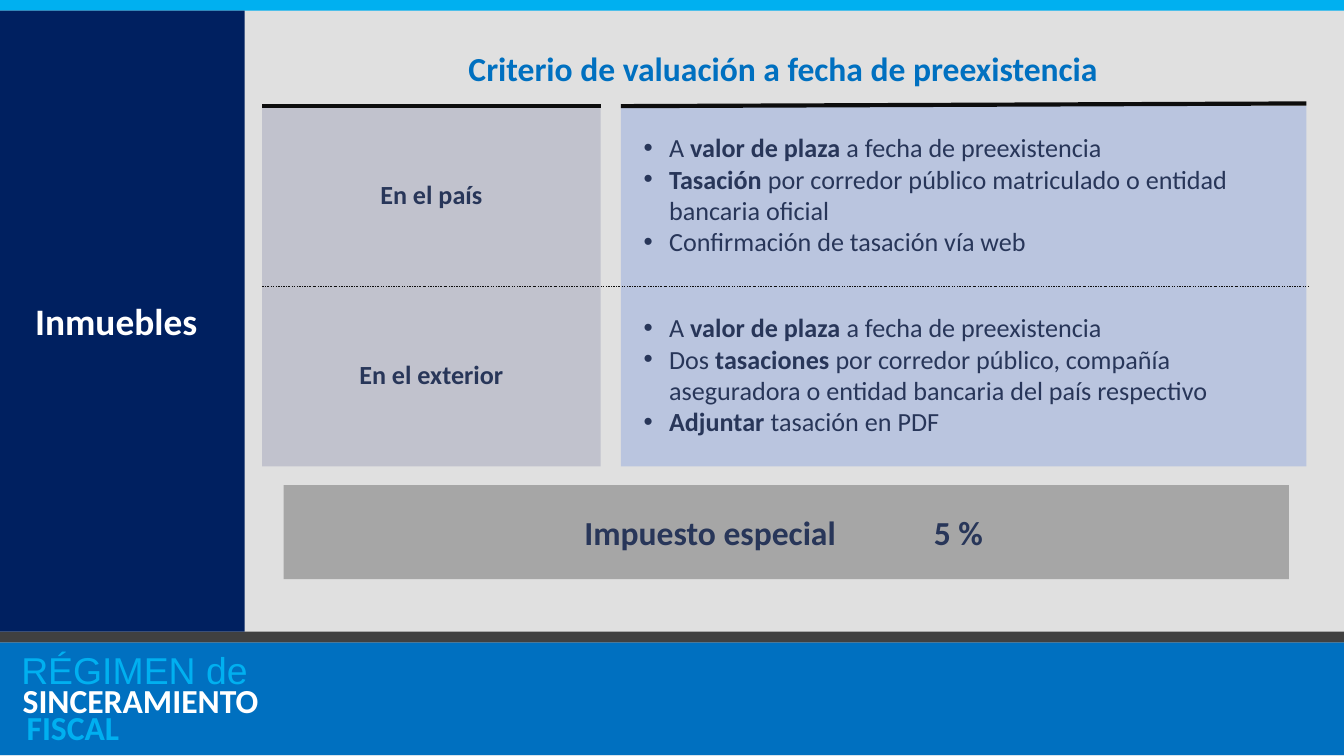
from lxml import etree
from pptx import Presentation
from pptx.dml.color import RGBColor
from pptx.enum import dml, shapes, text
from pptx.oxml import ns
from pptx.util import Inches, Pt

WHITE = RGBColor(0xFF, 0xFF, 0xFF)
PAPER = RGBColor(0xD9, 0xD9, 0xD9)
BLUE = RGBColor(0x00, 0x70, 0xC0)
SKY = RGBColor(0x00, 0xB0, 0xF0)
NAVY = RGBColor(0x00, 0x20, 0x60)
INK = RGBColor(0x28, 0x36, 0x59)
BLACK = RGBColor(0x0D, 0x0D, 0x0D)
CHARCOAL = RGBColor(0x40, 0x40, 0x40)
GREY = RGBColor(0xA6, 0xA6, 0xA6)
LABEL_FILL = RGBColor(0xC1, 0xC2, 0xCD)
CRITERIA_FILL = RGBColor(0xBA, 0xC5, 0xDF)
CENTER = text.PP_ALIGN.CENTER

ROWS = [
    ("En el país", [
        [("A ", False), ("valor de plaza", True), (" a fecha de preexistencia", False)],
        [("Tasación", True),
         (" por corredor público matriculado o entidad bancaria oficial", False)],
        [("Confirmación de tasación vía web", False)],
    ]),
    ("En el exterior", [
        [("A ", False), ("valor de plaza ", True), ("a fecha de preexistencia", False)],
        [("Dos ", False), ("tasaciones ", True),
         ("por corredor público, compañía aseguradora o entidad bancaria del país respectivo",
          False)],
        [("Adjuntar", True), (" tasación en PDF", False)],
    ]),
]


def add_rect(s, x, y, w, h, color):
    """Add a plain filled rectangle and return it."""
    sp = s.shapes.add_shape(shapes.MSO_SHAPE.RECTANGLE, Inches(x), Inches(y), Inches(w), Inches(h))
    sp.shadow.inherit = False
    sp.fill.solid()
    sp.fill.fore_color.rgb = color
    sp.line.fill.background()
    return sp


def add_line(s, x1, y1, x2, y2, width):
    """Add a straight black line and return it."""
    cx = s.shapes.add_connector(
        shapes.MSO_CONNECTOR.STRAIGHT, Inches(x1), Inches(y1), Inches(x2), Inches(y2))
    cx.line.color.rgb = BLACK
    cx.line.width = Pt(width)
    etree.SubElement(cx.element.spPr, ns.qn("a:effectLst"))
    return cx


def style_run(r, size, color, bold=True, font="Calibri"):
    """Set the font of a run."""
    r.font.name, r.font.size, r.font.bold = font, Pt(size), bold
    r.font.color.rgb = color


def add_text(s, x, y, w, h, words, size, color, align=None, bold=True, font="Calibri"):
    """Add a one-line text box and return its paragraph."""
    tf = s.shapes.add_textbox(Inches(x), Inches(y), Inches(w), Inches(h)).text_frame
    tf.word_wrap = True
    tf.text = words
    p = tf.paragraphs[0]
    p.alignment = align
    style_run(p.runs[0], size, color, bold, font)
    return p


def add_bullets(s, x, y, w, h, items):
    """Add a bulleted list whose items are runs of text and weight."""
    tf = s.shapes.add_textbox(Inches(x), Inches(y), Inches(w), Inches(h)).text_frame
    tf.word_wrap = True
    for i, item in enumerate(items):
        p = tf.paragraphs[0] if i == 0 else tf.add_paragraph()
        pPr = p._p.get_or_add_pPr()
        pPr.set("marL", str(Inches(0.19)))
        pPr.set("indent", str(-Inches(0.19)))
        etree.SubElement(pPr, ns.qn("a:buFont")).set("typeface", "Arial")
        etree.SubElement(pPr, ns.qn("a:buChar")).set("char", "•")
        for words, bold in item:
            r = p.add_run()
            r.text = words
            style_run(r, 14, INK, bold)


def add_backdrop(s, x, y, w, h):
    """Cover the slide with a translucent grey panel and a top stripe."""
    sp = add_rect(s, x, y, w, h, PAPER)
    color = sp.element.spPr.find(ns.qn("a:solidFill"))[0]
    etree.SubElement(color, ns.qn("a:alpha")).set("val", "80000")
    add_rect(s, x, y, w, 0.08, SKY)


def add_title(s, x, y, w, h):
    """Place and format the slide title in front of the backdrop."""
    sp = s.shapes.title
    sp.element.getparent().append(sp.element)
    sp.left, sp.top, sp.width, sp.height = Inches(x), Inches(y), Inches(w), Inches(h)
    tf = sp.text_frame
    tf.text = "Criterio de valuación a fecha de preexistencia"
    tf.vertical_anchor = text.MSO_ANCHOR.TOP
    tf.paragraphs[0].alignment = CENTER
    style_run(tf.paragraphs[0].runs[0], 18, BLUE)


def add_footer(s, x, y, w, h):
    """Draw the footer band with the name of the regime."""
    add_rect(s, x, y, w, h, BLUE)
    add_rect(s, x + 0.01, y - 0.08, w - 0.01, 0.08, CHARCOAL)
    add_text(s, x + 0.09, y - 0.01, 4.45, 0.44, "RÉGIMEN de", 20, SKY, bold=False, font="Arial")
    add_text(s, x + 0.1, y + 0.23, 4.35, 0.4, "SINCERAMIENTO", 18, WHITE)
    add_text(s, x + 0.13, y + 0.43, 1.79, 0.4, "FISCAL", 18, SKY)


def add_sidebar(s, x, y, w, h):
    """Draw the side panel with the asset type."""
    add_rect(s, x, y, w, h, NAVY)
    add_text(s, x + 0.15, y + 2.09, 1.49, 0.44, "Inmuebles", 20, WHITE, CENTER)


def add_criteria(s, x, y, w, h):
    """Draw the label and criteria columns with one row per location."""
    label_w, gap = 2.52, 0.15
    right = x + label_w + gap
    row_h = h / len(ROWS)
    add_rect(s, right, y, w - label_w - gap, h, CRITERIA_FILL)
    add_rect(s, x, y, label_w, h, LABEL_FILL)
    add_line(s, right, y, x + w, y - 0.02, 2.25)
    add_line(s, x, y, x + label_w, y, 2.25)
    for i, (label, items) in enumerate(ROWS):
        top = y + i * row_h
        if i:
            divider = add_line(s, x, top, x + w + 0.02, top, 0.25)
            divider.line.dash_style = dml.MSO_LINE.DASH_DOT
        add_text(s, x + 0.04, top + 0.49, label_w - 0.08, 0.34, label, 14, INK, CENTER)
        add_bullets(s, right + 0.07, top + 0.14, 5, 1.04, items)


def add_tax(s, x, y, w, h):
    """Draw the band with the special tax rate."""
    add_rect(s, x, y, w, h, GREY)
    p = add_text(s, x + 2.14, y + 0.15, 3.21, 0.4, "Impuesto especial\t5 %", 18, INK)
    tabs = etree.SubElement(p._p.get_or_add_pPr(), ns.qn("a:tabLst"))
    tab = etree.SubElement(tabs, ns.qn("a:tab"))
    tab.set("pos", str(Inches(2.6)))
    tab.set("algn", "l")


def main():
    """Build the slide and save it."""
    prs = Presentation()
    prs.slide_width = Inches(10)
    prs.slide_height = prs.slide_width * 9 // 16
    s = prs.slides.add_slide(prs.slide_layouts[5])
    add_backdrop(s, -0.02, 0, 10.02, 5.62)
    add_footer(s, -0.03, 4.78, 10.03, 0.84)
    add_title(s, 3.36, 0.31, 4.94, 0.4)
    add_sidebar(s, -0.03, 0.08, 1.85, 4.62)
    add_criteria(s, 1.95, 0.79, 7.77, 2.68)
    add_tax(s, 2.11, 3.61, 7.48, 0.7)
    prs.save("out.pptx")


if __name__ == "__main__":
    main()
